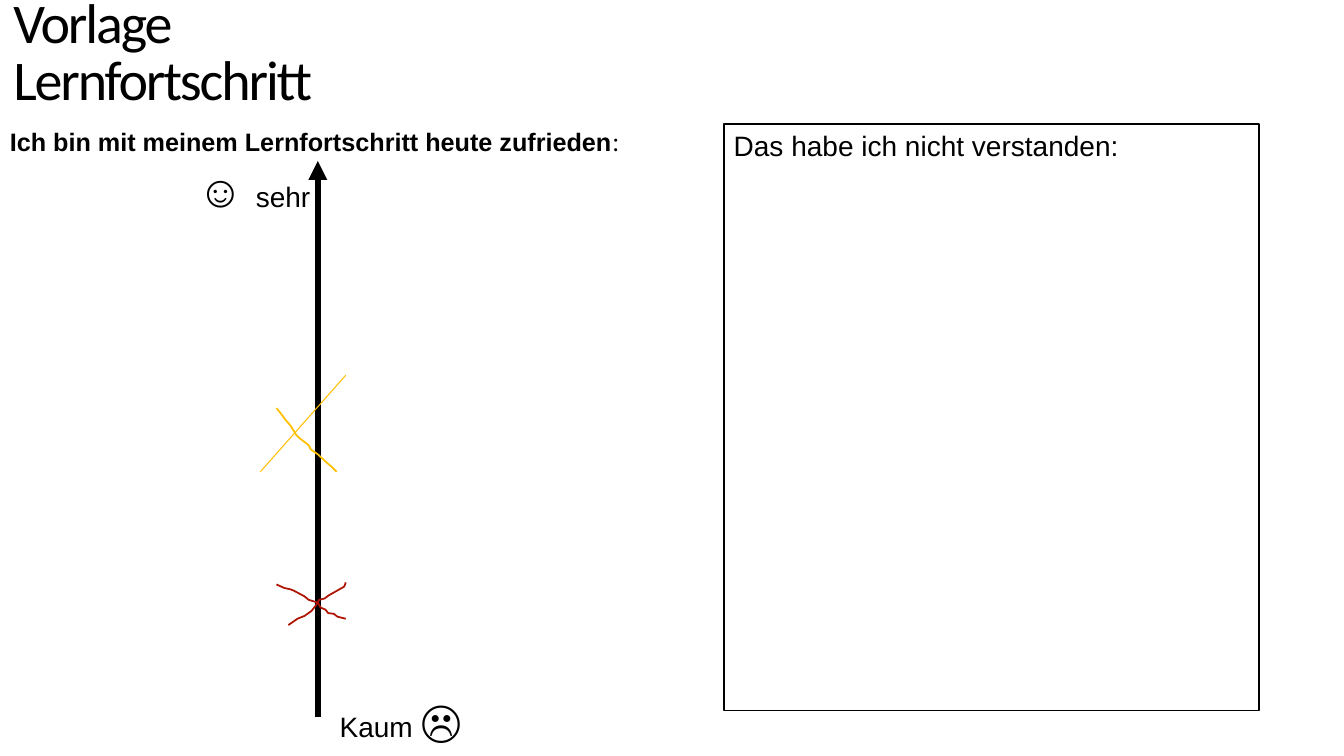
from lxml.etree import SubElement
from pptx import Presentation
from pptx.dml.color import RGBColor
from pptx.enum.shapes import MSO_CONNECTOR, MSO_SHAPE
from pptx.enum.text import MSO_ANCHOR, PP_ALIGN
from pptx.oxml.ns import qn
from pptx.util import Pt

COLORS = {"black": "000000", "white": "FFFFFF", "red": "AF1301", "yellow": "FFC000"}

presentation = Presentation()
presentation.slide_width, presentation.slide_height = Pt(960), Pt(540)
slide = presentation.slides.add_slide(presentation.slide_layouts[6])
shapes = slide.shapes


def write(shape, *runs, wrap=True, line_spacing=None, margin=None, tracking=None):
    """Fill a shape with one left-aligned paragraph of (text, size, font, bold) runs."""
    frame = shape.text_frame
    frame.word_wrap = wrap
    frame.vertical_anchor = MSO_ANCHOR.TOP
    if margin is not None:
        frame.margin_left = frame.margin_right = Pt(margin)
        frame.margin_top = frame.margin_bottom = Pt(margin)
    paragraph = frame.paragraphs[0]
    paragraph.alignment = PP_ALIGN.LEFT
    if line_spacing:
        paragraph.line_spacing = line_spacing
    for text, size, font, bold in runs:
        run = paragraph.add_run()
        run.text = text
        run.font.size, run.font.name, run.font.bold = Pt(size), font, bold
        run.font.color.rgb = RGBColor.from_string(COLORS["black"])
        if tracking:
            run.font._element.set("spc", str(round(tracking * 100)))


def draw_line(start, end, color, width):
    connector = shapes.add_connector(
        MSO_CONNECTOR.STRAIGHT, *(Pt(value) for value in start + end))
    connector.line.color.rgb = RGBColor.from_string(COLORS[color])
    connector.line.width = Pt(width)
    SubElement(connector._element.spPr, qn("a:effectLst"))
    return connector


# Progress scale
scale_arrow = draw_line((227, 512.5), (227, 115), "black", 4.5)
SubElement(scale_arrow.line._get_or_add_ln(), qn("a:tailEnd"), type="triangle")

# Title and scale labels
title = shapes.add_textbox(Pt(9.5), Pt(-1.5), Pt(332), Pt(66))
write(title, ("Vorlage Lernfortschritt", 40, "Calibri", False),
      line_spacing=0.85, margin=0, tracking=-1.5)

low_label = shapes.add_textbox(Pt(235.5), Pt(491), Pt(212.5), Pt(46))
write(low_label, ("Kaum ", 20, "Arial", False), ("☹", 32, "Arial", False))

question = shapes.add_textbox(Pt(0), Pt(86.5), Pt(454.5), Pt(29))
write(question, ("Ich bin mit meinem Lernfortschritt heute zufrieden", 18, "Arial", True),
      (":", 18, "TeX Gyre Bonum", False), wrap=False)

high_label = shapes.add_textbox(Pt(134), Pt(112.5), Pt(212.5), Pt(46))
write(high_label, ("☺ ", 32, "Arial", False), ("sehr", 20, "Arial", False))

# Box for open questions
open_questions = shapes.add_shape(
    MSO_SHAPE.RECTANGLE, Pt(517), Pt(88.5), Pt(382.5), Pt(419))
open_questions.shadow.inherit = False
open_questions.fill.solid()
open_questions.fill.fore_color.rgb = RGBColor.from_string(COLORS["white"])
open_questions.line.color.rgb = RGBColor.from_string(COLORS["black"])
open_questions.line.width = Pt(1.25)
write(open_questions, ("Das habe ich nicht verstanden:", 20, "Arial", False))

# Hand-drawn crosses on the scale
strokes = [
    ("red", [(197.5, 417.5), (203, 420), (207.5, 421), (210, 422), (217.5, 426),
             (220.5, 428.5), (227, 430.5), (229, 434), (232.5, 435.5), (234.5, 438),
             (238.5, 438.5), (241, 440.5), (247, 442)]),
    ("red", [(206, 446.5), (212.5, 442), (217.5, 440), (222.5, 436.5), (226, 432),
             (228, 428.5), (232, 427.5), (234.5, 425.5), (246, 419), (247, 416)]),
    ("yellow", [(197.5, 291.5), (201.5, 296.5), (204, 300), (207.5, 304), (211.5, 310.5),
                (214, 313), (220.5, 318), (222, 321), (227, 324.5), (234, 331),
                (237, 333.5), (239, 335.5), (240.5, 337)]),
]
for color, points in strokes:
    start, *rest = [(Pt(x), Pt(y)) for x, y in points]
    builder = shapes.build_freeform(*start)
    builder.add_line_segments(rest, close=False)
    stroke = builder.convert_to_shape()
    stroke.shadow.inherit = False
    stroke.fill.background()
    stroke.line.color.rgb = RGBColor.from_string(COLORS[color])
    stroke.line.width = Pt(1.25)

draw_line((186, 337), (247, 268), "yellow", 0.75)

presentation.save("out.pptx")
